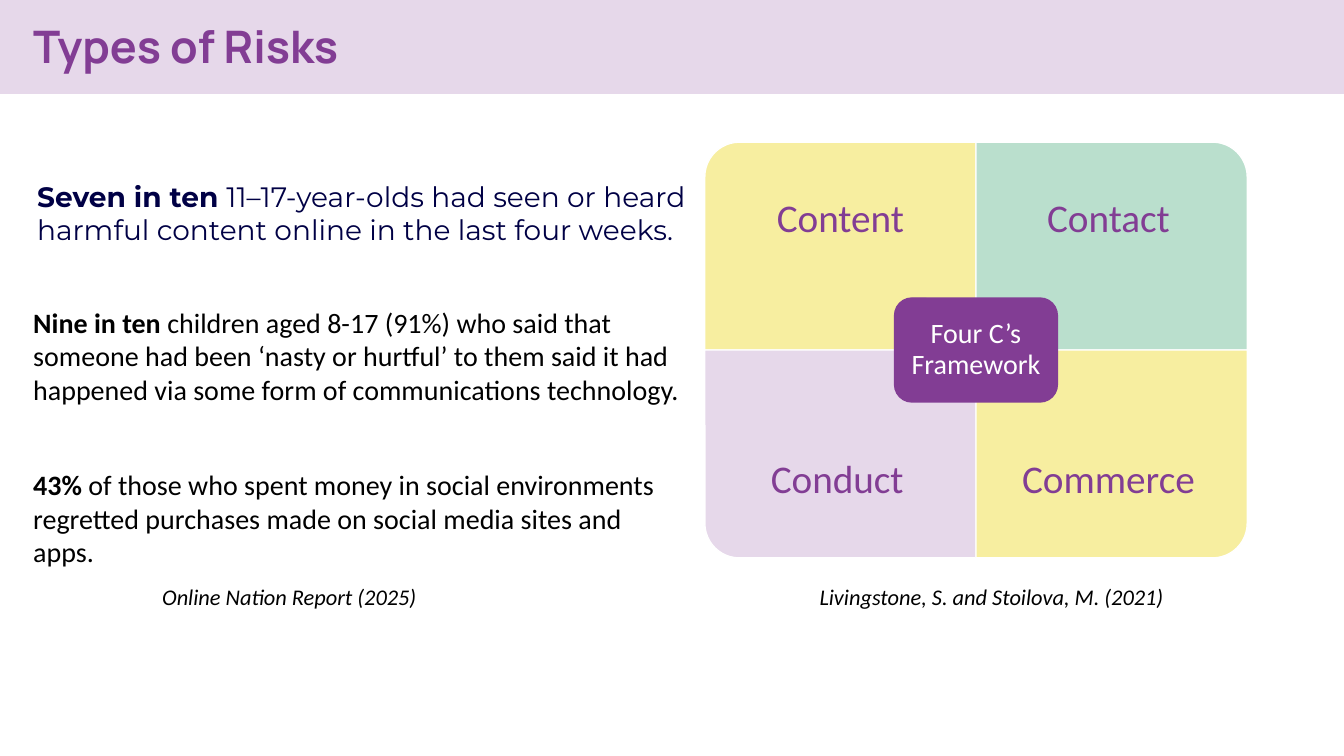
from dataclasses import dataclass
from pptx import Presentation
from pptx import util as u
from pptx.dml import color
from pptx.enum import shapes, text


@dataclass(frozen=True)
class Theme:
    plum: str = "823D94"
    lilac: str = "E6D8EA"
    lemon: str = "F7EEA0"
    mint: str = "BADFCD"
    navy: str = "000045"
    black: str = "000000"
    white: str = "FFFFFF"
    head: str = "Manrope"
    lead: str = "Montserrat"
    body: str = "Calibri"
    title: int = 32
    label: int = 28
    base: int = 20
    cite: int = 16


class Deck:
    def __init__(self, theme):
        self.theme = theme
        self.prs = Presentation()
        self.prs.slide_width = u.Inches(13.33)
        self.prs.slide_height = u.Inches(7.5)
        self.slide = self.prs.slides.add_slide(self.prs.slide_layouts[6])

    def place(self, x, y, w, h):
        wide, high = self.prs.slide_width, self.prs.slide_height
        return [round(part * side / 100)
                for part, side in zip((x, y, w, h), (wide, high, wide, high))]

    def shape(self, kind, area, fill, line, turn=0):
        x, y, w, h = self.place(*area)
        if turn % 180:
            x, y, w, h = x + (w - h) // 2, y + (h - w) // 2, h, w
        item = self.slide.shapes.add_shape(kind, x, y, w, h)
        item.rotation = turn
        item.shadow.inherit = False
        item.fill.solid()
        item.fill.fore_color.rgb = color.RGBColor.from_string(fill)
        item.line.color.rgb = color.RGBColor.from_string(line)
        item.line.width = u.Pt(1)
        return item

    def style(self, run, size, font, tint, bold=False, italic=False):
        run.font.size = u.Pt(size)
        run.font.name = font
        run.font.bold = bold
        run.font.italic = italic
        run.font.color.rgb = color.RGBColor.from_string(tint)

    def prose(self, area, words, size, font, tint, bold="", italic=False):
        box = self.slide.shapes.add_textbox(*self.place(*area))
        frame = box.text_frame
        frame.word_wrap = True
        frame.auto_size = text.MSO_AUTO_SIZE.SHAPE_TO_FIT_TEXT
        para = frame.paragraphs[0]
        for part, heavy in ((bold, True), (words, False)):
            if part:
                run = para.add_run()
                run.text = part
                self.style(run, size, font, tint, heavy, italic)

    def center(self, item, words, size, tint, inset, tail=""):
        frame = item.text_frame
        frame.word_wrap = True
        frame.vertical_anchor = text.MSO_ANCHOR.MIDDLE
        frame.margin_left = frame.margin_right = u.Inches(inset)
        frame.margin_top = frame.margin_bottom = u.Inches(inset)
        para = frame.paragraphs[0]
        para.text = words
        para.alignment = text.PP_ALIGN.CENTER
        para.line_spacing = 0.9
        self.style(para.runs[0], size, self.theme.body, tint)
        if tail:
            run = para.add_run()
            run.text = tail
            self.style(run, self.theme.base, self.theme.body, tint)

    def matrix(self, x, y, w, h, cells, hub):
        look, kind = self.theme, shapes.MSO_SHAPE
        deep = 20.53
        for spot, (name, fill, turn, tail) in enumerate(cells):
            row, col = divmod(spot, 2)
            left, top = x + col * w, y + row * h
            self.shape(kind.ROUND_1_RECTANGLE, (left, top, w, h),
                       fill, look.white, turn)
            area = self.place(left, top + row * (h - deep), w, deep)
            box = self.slide.shapes.add_textbox(*area)
            self.center(box, name, look.label, look.plum, 0.22, tail)
        wide, high = w * 0.6, h * 0.5
        core = self.shape(kind.ROUNDED_RECTANGLE,
                          (x + w - wide / 2, y + h - high / 2, wide, high),
                          look.plum, look.plum)
        self.center(core, hub, look.base, look.white, 0.08)


def main():
    look = Theme()
    deck = Deck(look)
    edge, half = 1.73, 50

    deck.shape(shapes.MSO_SHAPE.RECTANGLE, (0, 0, 100, 12.4),
               look.lilac, look.lilac)
    deck.prose((edge, 1.87, half, 8.53), "", look.title, look.head,
               look.plum, bold="Types of Risks")

    deck.matrix(52.44, 18.8, 20.18, 27.5, (
        ("Content", look.lemon, 270, ""),
        ("Contact", look.mint, 0, " "),
        ("Conduct", look.lilac, 180, " "),
        ("Commerce", look.lemon, 90, " "),
    ), "Four C’s Framework")

    for x, words in ((60.24, "Livingstone, S. and Stoilova, M. (2021)"),
                     (11.33, "Online Nation Report (2025)")):
        deck.prose((x, 76.53, 28.43, 4.93), words, look.cite, look.body,
                   look.black, italic=True)

    facts = (
        (2.03, 23.07, 10.27, look.lead, look.navy, "Seven in ten ",
         "11–17-year-olds had seen or heard harmful content online "
         "in the last four weeks."),
        (edge, 39.73, 14.8, look.body, look.black, "Nine in ten ",
         "children aged 8-17 (91%) who said that someone had been "
         "‘nasty or hurtful’ to them said it had happened via some form "
         "of communications technology."),
        (edge, 61.2, 14.8, look.body, look.black, "43% ",
         "of those who spent money in social environments regretted "
         "purchases made on social media sites and apps."),
    )
    for x, y, h, font, tint, bold, words in facts:
        deck.prose((x, y, half, h), words, look.base, font, tint, bold)

    deck.prs.save("out.pptx")


if __name__ == "__main__":
    main()
